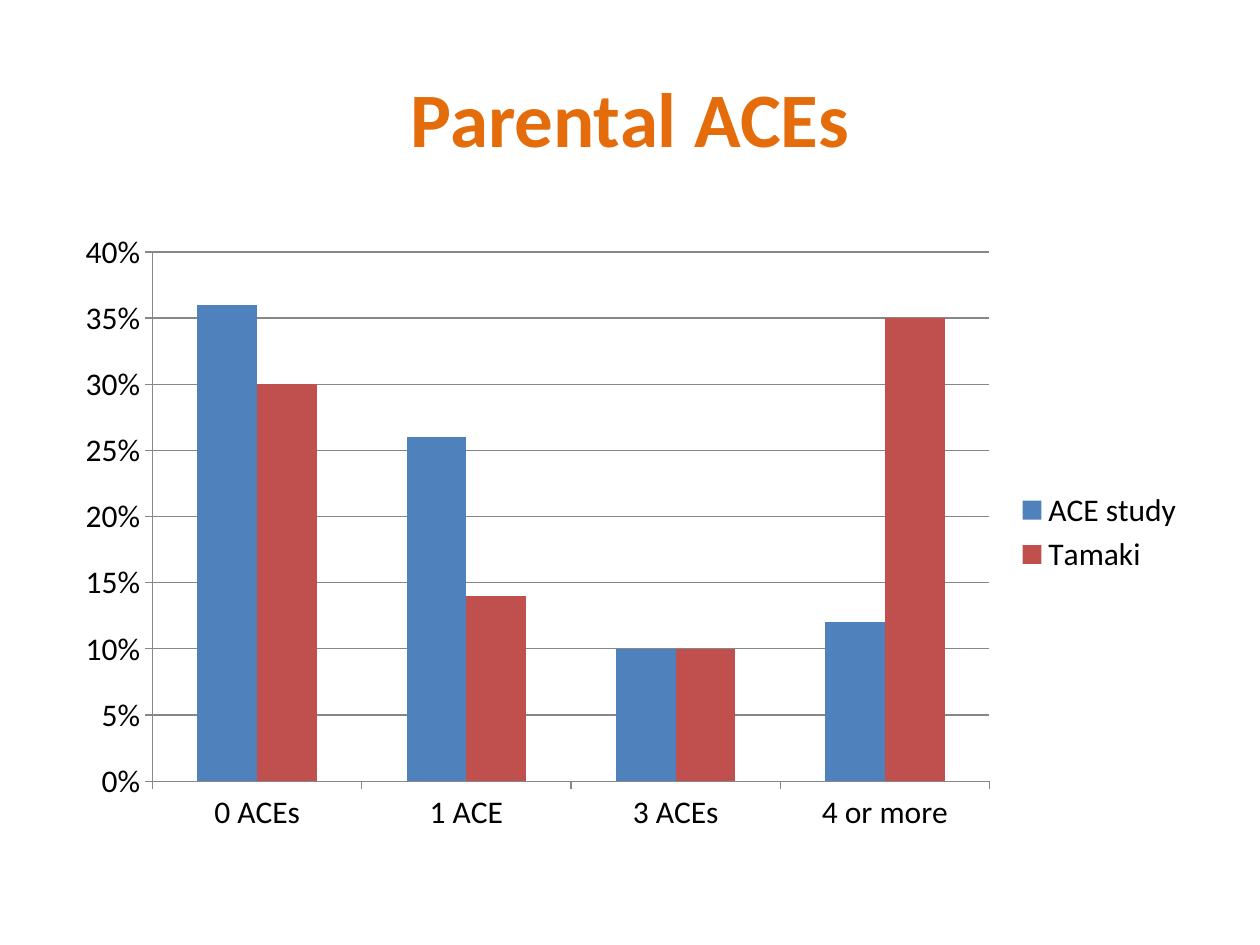
from pptx import Presentation
from pptx.chart.data import CategoryChartData
from pptx.dml.color import RGBColor
from pptx.enum.chart import XL_CHART_TYPE as ChartType, XL_LEGEND_POSITION as LegendPosition, XL_TICK_MARK as TickMark
from pptx.enum.text import MSO_ANCHOR as Anchor, PP_ALIGN as Align
from pptx.util import Pt

COLORS = {"title": "E46C0A", "text": "000000", "axis": "878787", "ACE study": "4F81BD", "Tamaki": "C0504D"}
TITLE_FONT = {"name": "Calibri", "size": Pt(44), "bold": True}
CHART_FONT = {"name": "Calibri", "size": Pt(18), "bold": False}
CATEGORIES = ["0 ACEs", "1 ACE", "3 ACEs", "4 or more"]
SERIES = {"ACE study": [0.36, 0.26, 0.1, 0.12], "Tamaki": [0.3, 0.14, 0.1, 0.35]}


class SlideBuilder:
    """Hold the slide style and add each kind of element in points."""

    def __init__(self, presentation):
        self.slide = presentation.slides.add_slide(presentation.slide_layouts[5])

    def color(self, name):
        return RGBColor.from_string(COLORS[name])

    def apply(self, target, values):
        for name, value in values.items():
            setattr(target, name, value)

    def style_font(self, font, values, color):
        self.apply(font, values)
        font.color.rgb = self.color(color)

    def style_line(self, line):
        line.color.rgb = self.color("axis")
        line.width = Pt(0.75)

    def title(self, text, left, top, width, height):
        shape = self.slide.shapes.title
        self.apply(shape, {"left": Pt(left), "top": Pt(top), "width": Pt(width), "height": Pt(height)})
        shape.text_frame.text = text
        shape.text_frame.vertical_anchor = Anchor.MIDDLE
        paragraph = shape.text_frame.paragraphs[0]
        paragraph.alignment = Align.CENTER
        self.style_font(paragraph.runs[0].font, TITLE_FONT, "title")

    def column_chart(self, categories, series_values, left, top, width, height):
        data = CategoryChartData(number_format="0%")
        data.categories = categories
        for name, values in series_values.items():
            data.add_series(name, values)
        chart = self.slide.shapes.add_chart(
            ChartType.COLUMN_CLUSTERED, Pt(left), Pt(top), Pt(width), Pt(height), data
        ).chart
        self.style_font(chart.font, CHART_FONT, "text")
        self.apply(chart, {"has_title": False, "has_legend": True})
        self.apply(chart.legend, {"position": LegendPosition.RIGHT, "include_in_layout": False})
        plot = chart.plots[0]
        self.apply(plot, {"gap_width": 150, "overlap": 0, "vary_by_categories": False})
        for series in plot.series:
            series.format.fill.solid()
            series.format.fill.fore_color.rgb = self.color(series.name)
        for axis in (chart.category_axis, chart.value_axis):
            self.apply(axis, {"major_tick_mark": TickMark.OUTSIDE, "minor_tick_mark": TickMark.NONE})
            self.style_line(axis.format.line)
        value_axis = chart.value_axis
        self.apply(value_axis, {"minimum_scale": 0, "maximum_scale": 0.4, "major_unit": 0.05,
                                "has_major_gridlines": True})
        self.style_line(value_axis.major_gridlines.format.line)
        self.apply(value_axis.tick_labels, {"number_format": "0%", "number_format_is_linked": False})


def main():
    presentation = Presentation()
    presentation.slide_width, presentation.slide_height = Pt(720), Pt(540)
    builder = SlideBuilder(presentation)
    builder.title("Parental ACEs", 36, 21.6, 648, 90)
    builder.column_chart(CATEGORIES, SERIES, 36, 126, 648, 356.4)
    presentation.save("out.pptx")


if __name__ == "__main__":
    main()
